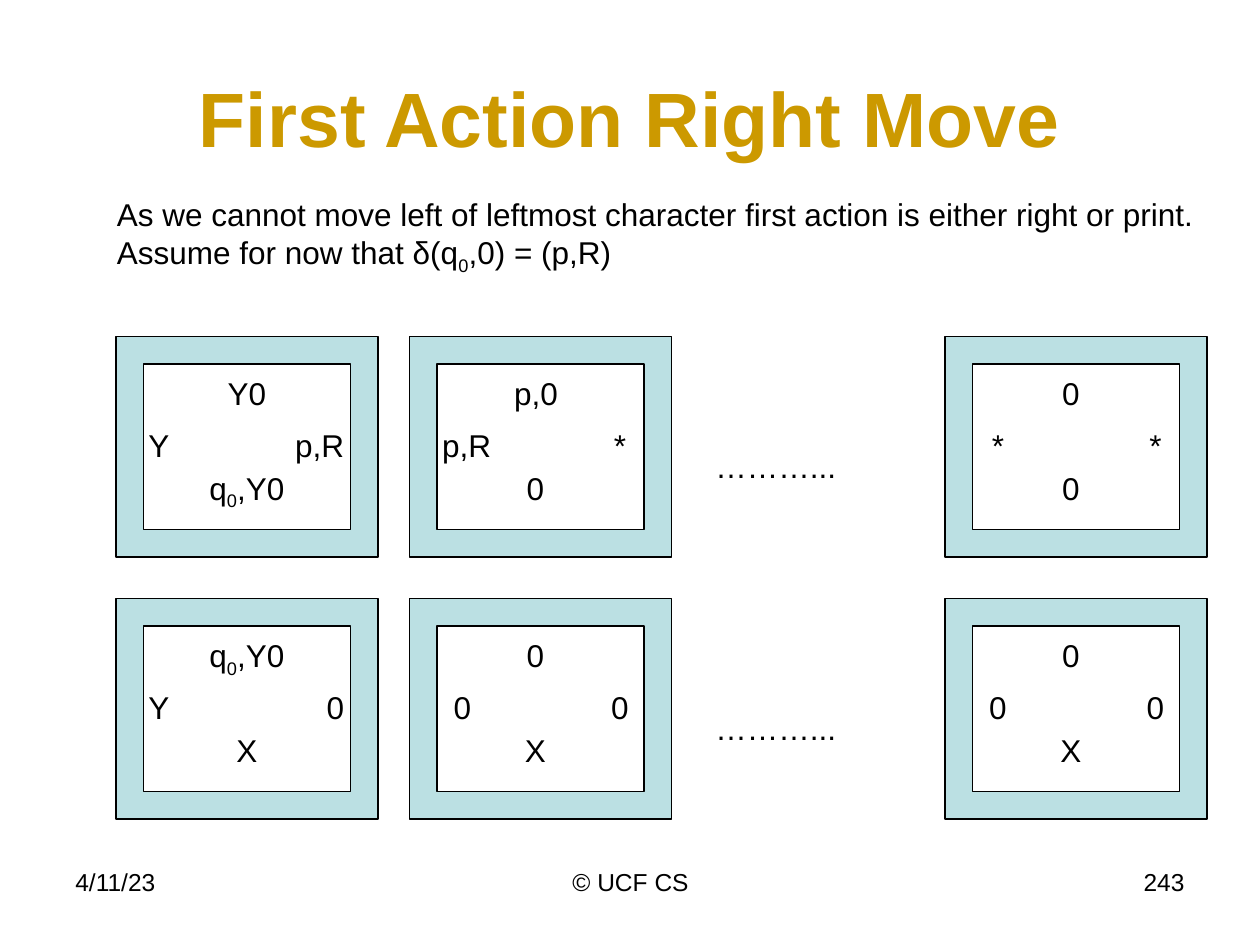
from dataclasses import dataclass

from pptx import Presentation
from pptx.dml.color import RGBColor
from pptx.enum import shapes, text
from pptx.util import Inches, Pt


@dataclass(frozen=True)
class Theme:
    font: str = "Arial"
    title: RGBColor = RGBColor(0xCC, 0x99, 0x00)
    ink: RGBColor = RGBColor(0, 0, 0)
    frame: RGBColor = RGBColor(0xBB, 0xE0, 0xE3)
    title_size: int = 44
    body_size: int = 18
    footer_size: int = 14
    line: float = 0.75


THEME = Theme()
LEFT, CENTER, RIGHT = text.PP_ALIGN.LEFT, text.PP_ALIGN.CENTER, text.PP_ALIGN.RIGHT
COLUMNS = (0.92, 3.25, 7.5)
ROWS = (2.67, 4.75)
TILE_SIZE = (2.08, 1.75)
LABEL_TOPS = (0.25, 0.66, 0.66, 1.0)

WIDE = (0.25, 1.58, CENTER)
BROAD = (0.17, 1.67, CENTER)
MIDDLE = (0.75, 0.5, CENTER)
LEFT_EDGE = (0.16, 0.92, LEFT)
RIGHT_EDGE = (1.08, 0.83, RIGHT)
LEFT_INNER = (0.17, 0.5, CENTER)
RIGHT_INNER = (1.42, 0.5, CENTER)

FIRST = (WIDE, LEFT_EDGE, RIGHT_EDGE, WIDE)
OTHER = (MIDDLE, LEFT_INNER, RIGHT_INNER, MIDDLE)
TILES = (
    (
        (("Y0", "Y", "p,R", "q_0,Y0"), FIRST),
        (("p,0", "p,R", "*", "0"), (BROAD, LEFT_EDGE, RIGHT_INNER, MIDDLE)),
        (("0", "*", "*", "0"), OTHER),
    ),
    (
        (("q_0,Y0", "Y", "0", "X"), FIRST),
        (("0", "0", "0", "X"), OTHER),
        (("0", "0", "0", "X"), OTHER),
    ),
)


def style(p, size, color, align, bold=False):
    p.alignment = align
    p.font.name = THEME.font
    p.font.size = Pt(size)
    p.font.bold = bold
    p.font.color.rgb = color


def add_runs(p, content):
    first, *rest = content.split("_")
    p.add_run().text = first
    for piece in rest:
        sub = p.add_run()
        sub.text = piece[0]
        sub.font._element.set("baseline", "-25000")
        p.add_run().text = piece[1:]


def add_title(slide, content):
    sp = slide.shapes.title
    sp.left, sp.top, sp.width, sp.height = map(Inches, (0.5, 0.3, 9, 1.25))
    tf = sp.text_frame
    tf.text = content
    tf.auto_size = text.MSO_AUTO_SIZE.NONE
    tf.vertical_anchor = text.MSO_ANCHOR.MIDDLE
    style(tf.paragraphs[0], THEME.title_size, THEME.title, CENTER, bold=True)


def add_text(slide, content, box, align=LEFT, size=THEME.body_size, grow=True):
    tf = slide.shapes.add_textbox(*map(Inches, box)).text_frame
    tf.word_wrap = True
    if grow:
        tf.auto_size = text.MSO_AUTO_SIZE.SHAPE_TO_FIT_TEXT
    p = tf.paragraphs[0]
    add_runs(p, content)
    style(p, size, THEME.ink, align)


def add_tile(slide, x, y, labels, slots):
    sp = slide.shapes.add_shape(
        shapes.MSO_SHAPE.FRAME, *map(Inches, (x, y, *TILE_SIZE))
    )
    sp.shadow.inherit = False
    sp.fill.solid()
    sp.fill.fore_color.rgb = THEME.frame
    sp.line.color.rgb = THEME.ink
    sp.line.width = Pt(THEME.line)
    for label, (dx, width, align), dy in zip(labels, slots, LABEL_TOPS):
        height = 0.4 if "0" in label else 0.5
        add_text(slide, label, (x + dx, y + dy, width, height), align)


def add_footer(slide):
    for content, x, width, align in (
        ("4/11/23", 0.5, 2.33, LEFT),
        ("© UCF CS", 3.42, 3.17, CENTER),
        ("243", 7.17, 2.33, RIGHT),
    ):
        add_text(slide, content, (x, 6.83, width, 0.52), align,
                 THEME.footer_size, grow=False)


def main():
    prs = Presentation()
    prs.slide_width, prs.slide_height = Inches(10), Inches(7.5)
    slide = prs.slides.add_slide(prs.slide_layouts[5])
    add_title(slide, "First Action Right Move")
    add_text(
        slide,
        "As we cannot move left of leftmost character first action is either "
        "right or print. Assume for now that δ(q_0,0) = (p,R)",
        (0.83, 1.5, 8.75, 0.71),
    )
    for y, row in zip(ROWS, TILES):
        for x, (labels, slots) in zip(COLUMNS, row):
            add_tile(slide, x, y, labels, slots)
        add_text(slide, "………...", (5.58, y + 0.83, 1.5, 0.5))
    add_footer(slide)
    prs.save("out.pptx")


if __name__ == "__main__":
    main()
